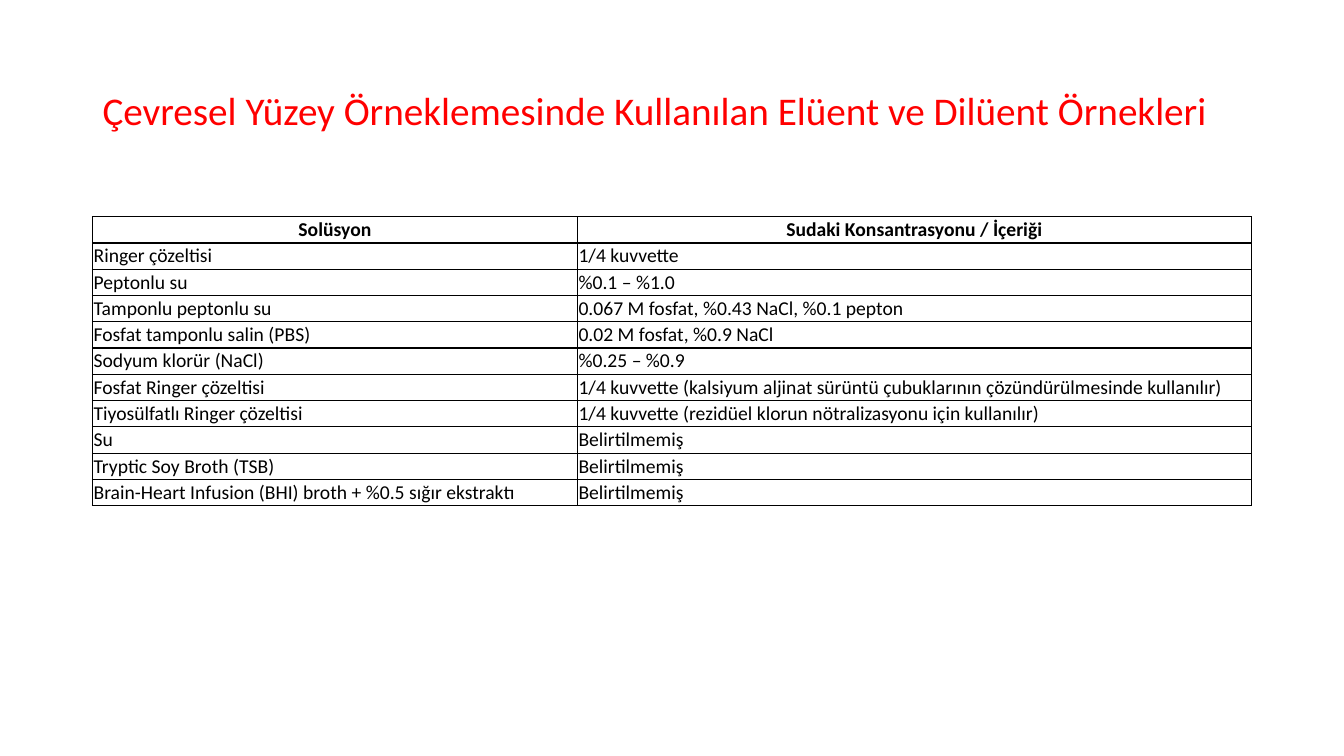
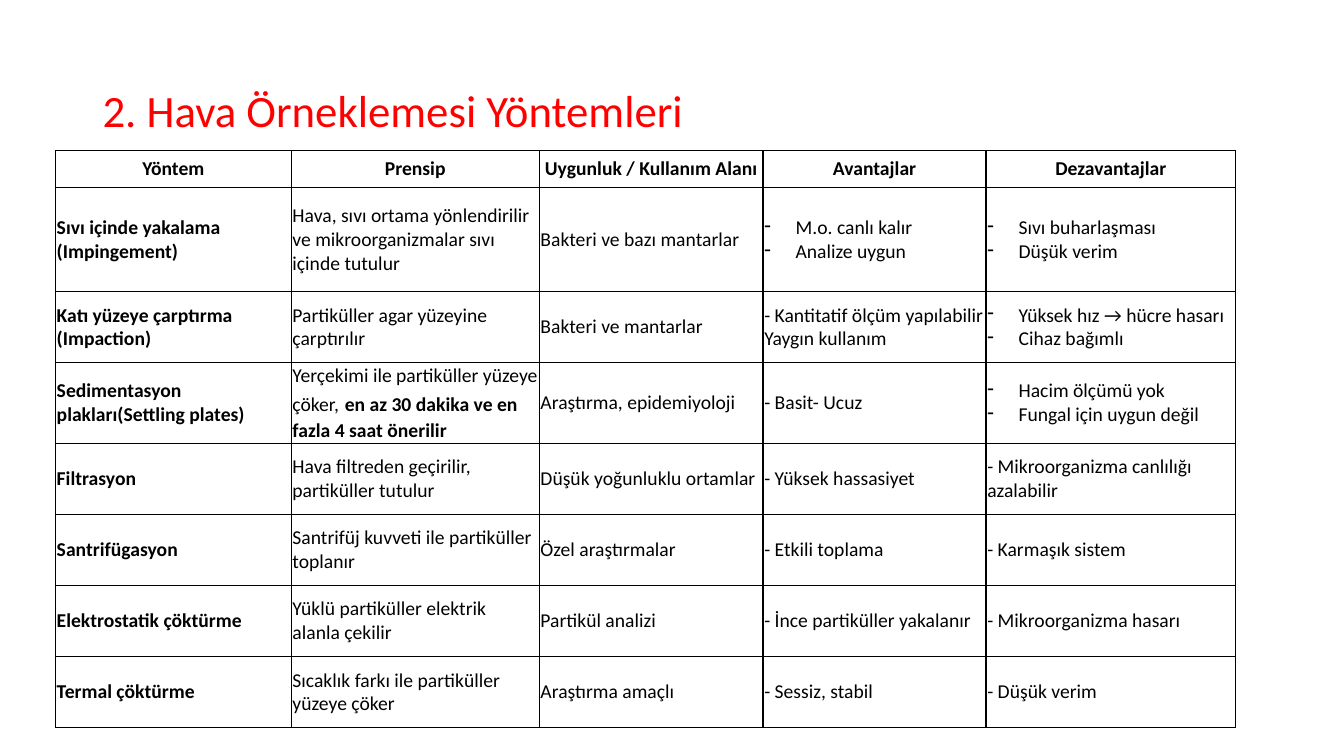
"""Build two titled table slides on surface and air sampling."""
from lxml.etree import SubElement
from pptx import Presentation
from pptx.dml.color import RGBColor
from pptx.enum.text import MSO_ANCHOR, MSO_AUTO_SIZE, PP_ALIGN
from pptx.oxml import parse_xml
from pptx.oxml.ns import nsdecls, qn
from pptx.util import Cm, Pt

FONT, RED, BLACK = "Calibri", "FF0000", "000000"
PAD, INDENT = Cm(0.03), Cm(0.79)


def style(run, size, color, bold=False):
    font = run.font
    font.name, font.size, font.bold = FONT, Pt(size), bold
    font.color.rgb = RGBColor.from_string(color)


def border(cell):
    props = cell._tc.get_or_add_tcPr()
    for spot, side in enumerate(("lnL", "lnR", "lnT", "lnB")):
        props.insert(spot, parse_xml(
            f'<a:{side} {nsdecls("a")} w="12700"><a:solidFill>'
            f'<a:srgbClr val="{BLACK}"/></a:solidFill></a:{side}>'))


fluids = [
    ("Solüsyon", "Sudaki Konsantrasyonu / İçeriği"),
    ("Ringer çözeltisi", "1/4 kuvvette"),
    ("Peptonlu su", "%0.1 – %1.0"),
    ("Tamponlu peptonlu su", "0.067 M fosfat, %0.43 NaCl, %0.1 pepton"),
    ("Fosfat tamponlu salin (PBS)", "0.02 M fosfat, %0.9 NaCl"),
    ("Sodyum klorür (NaCl)", "%0.25 – %0.9"),
    ("Fosfat Ringer çözeltisi",
     "1/4 kuvvette (kalsiyum aljinat sürüntü çubuklarının çözündürülmesinde kullanılır)"),
    ("Tiyosülfatlı Ringer çözeltisi",
     "1/4 kuvvette (rezidüel klorun nötralizasyonu için kullanılır)"),
    ("Su", "Belirtilmemiş"),
    ("Tryptic Soy Broth (TSB)", "Belirtilmemiş"),
    ("Brain-Heart Infusion (BHI) broth + %0.5 sığır ekstraktı", "Belirtilmemiş"),
]
methods = [
    ("Yöntem", "Prensip", "Uygunluk / Kullanım Alanı", "Avantajlar", "Dezavantajlar"),
    ("Sıvı içinde yakalama (Impingement)",
     "Hava, sıvı ortama yönlendirilir ve mikroorganizmalar sıvı içinde tutulur",
     "Bakteri ve bazı mantarlar",
     "M.o. canlı kalır\nAnalize uygun", "Sıvı buharlaşması\nDüşük verim"),
    ("Katı yüzeye çarptırma (Impaction)", "Partiküller agar yüzeyine çarptırılır",
     "Bakteri ve mantarlar", "- Kantitatif ölçüm yapılabilir Yaygın kullanım",
     "Yüksek hız → hücre hasarı\nCihaz bağımlı"),
    ("Sedimentasyon plakları(Settling plates)", "Yerçekimi ile partiküller yüzeye çöker,",
     "Araştırma, epidemiyoloji", "- Basit- Ucuz",
     "Hacim ölçümü yok\nFungal için uygun değil"),
    ("Filtrasyon", "Hava filtreden geçirilir, partiküller tutulur",
     "Düşük yoğunluklu ortamlar", "- Yüksek hassasiyet",
     "- Mikroorganizma canlılığı azalabilir"),
    ("Santrifügasyon", "Santrifüj kuvveti ile partiküller toplanır",
     "Özel araştırmalar", "- Etkili toplama", "- Karmaşık sistem"),
    ("Elektrostatik çöktürme", "Yüklü partiküller elektrik alanla çekilir",
     "Partikül analizi", "- İnce partiküller yakalanır", "- Mikroorganizma hasarı"),
    ("Termal çöktürme", "Sıcaklık farkı ile partiküller yüzeye çöker",
     "Araştırma amaçlı", "- Sessiz, stabil", "- Düşük verim"),
]
pages = [
    ("Çevresel Yüzey Örneklemesinde Kullanılan Elüent ve Dilüent Örnekleri", 28, fluids,
     (2.33, 5.46), (12.22, 16.99), [0.65] * 11, False),
    ("2. Hava Örneklemesi Yöntemleri", 32, methods,
     (1.4, 3.79), (5.94, 6.25, 5.64, 5.62, 6.29), [0.94, 2.62] + [1.79] * 6, True),
]

deck = Presentation()
deck.slide_width, deck.slide_height = Cm(33.87), Cm(19.05)

for head, size, rows, (left, top), widths, heights, bold in pages:
    slide = deck.slides.add_slide(deck.slide_layouts[5])
    title = slide.shapes.title
    title.left, title.top, title.width, title.height = Cm(2.33), Cm(1.01), Cm(29.21), Cm(3.68)
    frame = title.text_frame
    frame.text = head
    frame.auto_size = MSO_AUTO_SIZE.NONE
    frame.vertical_anchor = MSO_ANCHOR.MIDDLE
    para = frame.paragraphs[0]
    para.alignment, para.line_spacing = PP_ALIGN.LEFT, 0.9
    style(para.runs[0], size, RED)

    table = slide.shapes.add_table(len(rows), len(widths), Cm(left), Cm(top),
                                   Cm(sum(widths)), Cm(sum(heights))).table
    table.first_row = table.horz_banding = False
    for col, width in zip(table.columns, widths):
        col.width = Cm(width)
    for row, height in zip(table.rows, heights):
        row.height = Cm(height)

    for r, row in enumerate(rows):
        for c, text in enumerate(row):
            cell = table.cell(r, c)
            cell.margin_left = cell.margin_right = cell.margin_top = cell.margin_bottom = PAD
            cell.vertical_anchor = MSO_ANCHOR.MIDDLE
            cell.fill.background()
            border(cell)
            cell.text_frame.text = text
            for para in cell.text_frame.paragraphs:
                para.alignment = PP_ALIGN.CENTER if r == 0 else PP_ALIGN.LEFT
                if "\n" in text:
                    props = para._p.get_or_add_pPr()
                    props.set("marL", str(INDENT))
                    props.set("indent", str(-INDENT))
                    SubElement(props, qn("a:buChar")).set("char", "-")
                style(para.runs[0], 14, BLACK, r == 0 or (bold and c == 0))

para = table.cell(3, 1).text_frame.paragraphs[0]
for text, size in ((" ", 18), ("en az 30 dakika ve en fazla 4 saat önerilir", 14)):
    run = para.add_run()
    run.text = text
    style(run, size, BLACK, True)

deck.save("out.pptx")
